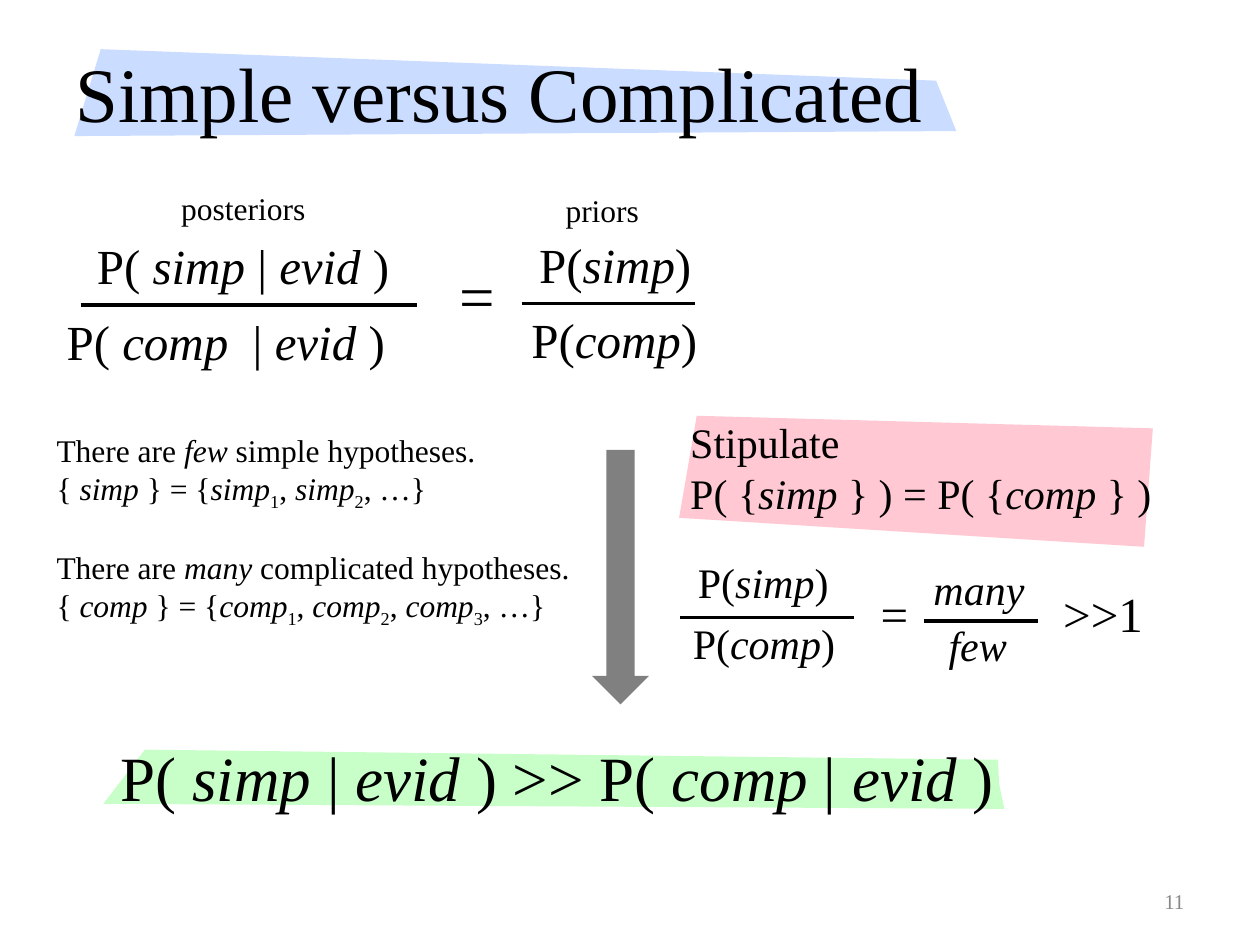
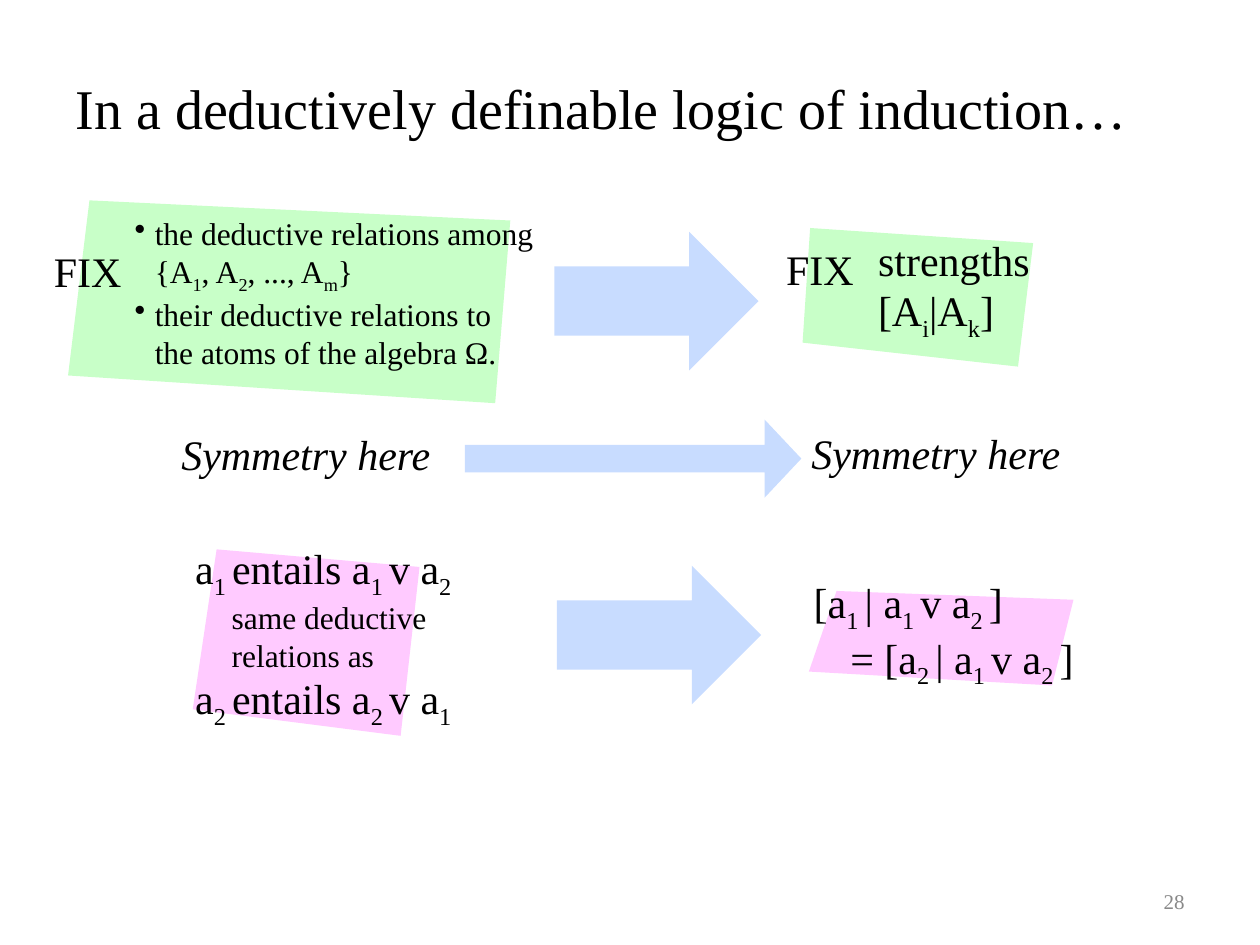
from dataclasses import dataclass

import pptx
import pptx.dml.color
import pptx.enum.shapes
import pptx.enum.text
import pptx.oxml
import pptx.oxml.ns
import pptx.presentation
import pptx.shapes.autoshape
import pptx.slide
import pptx.text.text
import pptx.util
from lxml import etree

RGBColor = pptx.dml.color.RGBColor
Align = pptx.enum.text.PP_ALIGN
Anchor = pptx.enum.text.MSO_ANCHOR
AutoSize = pptx.enum.text.MSO_AUTO_SIZE
ShapeType = pptx.enum.shapes.MSO_SHAPE

EMU_PER_PX = 9144  # 100 px to the inch
FONT = "Times New Roman"
BLACK = RGBColor(0x00, 0x00, 0x00)
NUMBER_GRAY = RGBColor(0x89, 0x89, 0x89)
ARROW_GRAY = RGBColor(0x80, 0x80, 0x80)
TITLE_BLUE = RGBColor(0xCA, 0xDC, 0xFF)
ARROW_BLUE = RGBColor(0xC8, 0xDC, 0xFF)
PINK = RGBColor(0xFF, 0xC8, 0xD3)
GREEN = RGBColor(0xC8, 0xFF, 0xC8)
LILAC = RGBColor(0xFF, 0xCA, 0xFF)


@dataclass(frozen=True)
class Label:
    text: str
    left: int
    top: int
    width: int
    height: int
    size: int = 24
    wrap: bool = False


@dataclass(frozen=True)
class Patch:
    """A loose highlighter patch behind text."""
    color: RGBColor
    corners: tuple[tuple[int, int], ...]


@dataclass(frozen=True)
class Bar:
    """The horizontal bar of a fraction."""
    left: int
    right: int
    y: int


@dataclass(frozen=True)
class Arrow:
    kind: ShapeType
    color: RGBColor
    left: int
    top: int
    width: int
    height: int
    adjustments: tuple[float, ...] = ()


def px(length: int) -> int:
    return pptx.util.Emu(length * EMU_PER_PX)


def box(left: int, top: int, width: int, height: int) -> tuple[int, ...]:
    return px(left), px(top), px(width), px(height)


def add_runs(paragraph: pptx.text.text._Paragraph, text: str, size: int, color: RGBColor) -> None:
    """Write marked text: *italic*, _subscript_, and a vertical tab for a line break."""
    for italic_index, stretch in enumerate(text.split("*")):
        for subscript_index, part in enumerate(stretch.split("_")):
            for line_index, line in enumerate(part.split("\v")):
                if line_index:
                    paragraph.add_line_break()
                if not line:
                    continue
                run = paragraph.add_run()
                run.text = line
                run.font.name = FONT
                run.font.size = pptx.util.Pt(size)
                run.font.color.rgb = color
                run.font.italic = italic_index % 2 == 1
                if subscript_index % 2:
                    run._r.get_or_add_rPr().set("baseline", "-25000")


def write_text(frame: pptx.text.text.TextFrame, text: str, *, size: int, color: RGBColor = BLACK,
               alignment: Align = Align.LEFT, anchor: Anchor = Anchor.TOP,
               wrap: bool = True, fit: AutoSize = AutoSize.NONE) -> None:
    frame.word_wrap = wrap
    frame.auto_size = fit
    frame.vertical_anchor = anchor
    for index, line in enumerate(text.split("\n")):
        paragraph = frame.paragraphs[0] if index == 0 else frame.add_paragraph()
        paragraph.alignment = alignment
        add_runs(paragraph, line, size, color)


def add_label(slide: pptx.slide.Slide, label: Label) -> pptx.shapes.autoshape.Shape:
    shape = slide.shapes.add_textbox(*box(label.left, label.top, label.width, label.height))
    write_text(shape.text_frame, label.text, size=label.size, wrap=label.wrap,
               fit=AutoSize.SHAPE_TO_FIT_TEXT)
    return shape


def fill_plain(shape: pptx.shapes.autoshape.Shape, color: RGBColor) -> None:
    shape.shadow.inherit = False
    shape.fill.solid()
    shape.fill.fore_color.rgb = color
    shape.line.fill.background()


def add_patch(slide: pptx.slide.Slide, patch: Patch) -> None:
    start, *others = patch.corners
    builder = slide.shapes.build_freeform(*start, scale=EMU_PER_PX)
    builder.add_line_segments(others, close=True)
    fill_plain(builder.convert_to_shape(), patch.color)


def add_bar(slide: pptx.slide.Slide, bar: Bar) -> None:
    connector = slide.shapes.add_connector(
        pptx.enum.shapes.MSO_CONNECTOR.STRAIGHT, px(bar.left), px(bar.y), px(bar.right), px(bar.y))
    connector.line.color.rgb = BLACK
    connector.line.width = pptx.util.Pt(2)
    etree.SubElement(connector._element.spPr, pptx.oxml.ns.qn("a:effectLst"))


def add_arrow(slide: pptx.slide.Slide, arrow: Arrow) -> None:
    shape = slide.shapes.add_shape(
        arrow.kind, *box(arrow.left, arrow.top, arrow.width, arrow.height))
    for index, value in enumerate(arrow.adjustments):
        shape.adjustments[index] = value
    fill_plain(shape, arrow.color)


def add_bullets(shape: pptx.shapes.autoshape.Shape, hang: int) -> None:
    for paragraph in shape.text_frame.paragraphs:
        properties = paragraph._p.get_or_add_pPr()
        properties.set("marL", str(px(hang)))
        properties.set("indent", str(-px(hang)))
        etree.SubElement(properties, pptx.oxml.ns.qn("a:buChar")).set("char", "•")


def add_slide(presentation: pptx.presentation.Presentation, title: str, *, title_size: int,
              title_height: int, number: int, patches: list[Patch], arrows: list[Arrow],
              bars: list[Bar], labels: list[Label]) -> pptx.slide.Slide:
    slide = presentation.slides.add_slide(presentation.slide_layouts[5])
    for patch in patches:
        add_patch(slide, patch)
    for arrow in arrows:
        add_arrow(slide, arrow)

    heading = slide.shapes.title
    heading.left, heading.top, heading.width, heading.height = box(50, 30, 876, title_height)
    write_text(heading.text_frame, title, size=title_size, anchor=Anchor.MIDDLE)
    slide.shapes._spTree.append(heading._element)  # in front of its patch

    for bar in bars:
        add_bar(slide, bar)
    for label in labels:
        add_label(slide, label)
    page = slide.shapes.add_textbox(*box(717, 695, 233, 40))
    write_text(page.text_frame, str(number), size=12, color=NUMBER_GRAY,
               alignment=Align.RIGHT, anchor=Anchor.MIDDLE)
    return slide


def build_simple_versus_complicated(presentation: pptx.presentation.Presentation) -> None:
    slide = add_slide(
        presentation, "Simple versus Complicated", title_size=44, title_height=86, number=11,
        patches=[
            Patch(TITLE_BLUE, ((80, 39), (743, 64), (759, 104), (59, 108))),
            Patch(PINK, ((553, 330), (915, 340), (908, 434), (539, 411))),
            Patch(GREEN, ((115, 595), (792, 603), (793, 622), (797, 642), (82, 638))),
        ],
        arrows=[Arrow(ShapeType.DOWN_ARROW, ARROW_GRAY, 470, 357, 45, 202)],
        bars=[Bar(64, 331, 242), Bar(414, 552, 241), Bar(540, 678, 490), Bar(733, 824, 493)],
        labels=[
            Label("posteriors", 134, 145, 120, 40, 18),
            Label("P( *simp *| *evid *)", 67, 182, 255, 57, 28),
            Label("P( *comp * | *evid* )", 43, 242, 278, 57, 28),
            Label("=", 355, 199, 49, 71, 36),
            Label("priors", 439, 147, 79, 40, 18),
            Label("P(*simp*)", 418, 181, 142, 57, 28),
            Label("P(*comp*)", 412, 241, 153, 57, 28),
            Label("Stipulate\nP( {*simp* } ) = P( {*comp* } )", 538, 326, 390, 91),
            Label("P(*simp*)", 544, 437, 125, 50),
            Label("P(*comp*)", 540, 485, 134, 50),
            Label("=", 689, 458, 42, 57, 28),
            Label("*many*", 731, 442, 102, 50),
            Label("*few*", 743, 487, 79, 50),
            Label(">>1", 834, 458, 84, 57, 28),
            Label("P( *simp *| *evid *) >> P( *comp *| *evid *)", 86, 581, 720, 71, 36),
        ])
    hypotheses = add_label(slide, Label(
        "There are *few* simple hypotheses.\n"
        "{ *simp* } = {*simp*_1_, *simp*_2_, …}\n"
        "There are *many* complicated hypotheses.\n"
        "{ *comp* } = {*comp*_1_, *comp*_2_, *comp*_3_, …}", 35, 337, 432, 192, 18))
    hypotheses.text_frame.paragraphs[2].space_before = pptx.util.Pt(21)


def build_deductively_definable(presentation: pptx.presentation.Presentation) -> None:
    slide = add_slide(
        presentation, "In a deductively definable logic of induction…",
        title_size=32, title_height=110, number=28,
        patches=[
            Patch(GREEN, ((643, 181), (820, 193), (808, 291), (637, 272))),
            Patch(GREEN, ((71, 159), (405, 175), (393, 320), (54, 298))),
            Patch(LILAC, ((172, 436), (333, 450), (318, 584), (153, 563))),
            Patch(LILAC, ((664, 469), (852, 476), (835, 544), (642, 533))),
        ],
        arrows=[
            Arrow(ShapeType.RIGHT_ARROW, ARROW_BLUE, 440, 184, 162, 110),
            Arrow(ShapeType.RIGHT_ARROW, ARROW_BLUE, 369, 333, 267, 62, (0.35, 0.47)),
            Arrow(ShapeType.RIGHT_ARROW, ARROW_BLUE, 442, 449, 162, 110),
        ],
        bars=[],
        labels=[
            Label("FIX", 33, 190, 74, 51),
            Label("FIX", 614, 188, 74, 51),
            Label("strengths\n[A_i_|A_k_]", 687, 181, 142, 91),
            Label("*Symmetry here*", 134, 335, 229, 51),
            Label("*Symmetry here*", 634, 334, 229, 51),
            Label("a_1 _entails a_1 _v a_2_", 145, 426, 231, 50),
            Label("same deductive relations as", 174, 470, 233, 71, 18, wrap=True),
            Label("a_2 _entails a_2 _v a_1_", 145, 529, 231, 50),
            Label("[a_1 _| a_1 _v a_2 _]", 636, 453, 178, 50),
            Label("= [a_2 _| a_1 _v a_2 _]", 665, 497, 206, 50),
        ])
    relations = add_label(slide, Label(
        "the deductive relations among\v{A_1_, A_2_, ..., A_m_}\n"
        "their deductive relations to the atoms of the algebra Ω.",
        97, 165, 338, 161, 18, wrap=True))
    add_bullets(relations, hang=16)


def main() -> None:
    presentation = pptx.Presentation()
    presentation.slide_width, presentation.slide_height = px(1000), px(750)
    build_simple_versus_complicated(presentation)
    build_deductively_definable(presentation)
    presentation.save("out.pptx")


if __name__ == "__main__":
    main()
